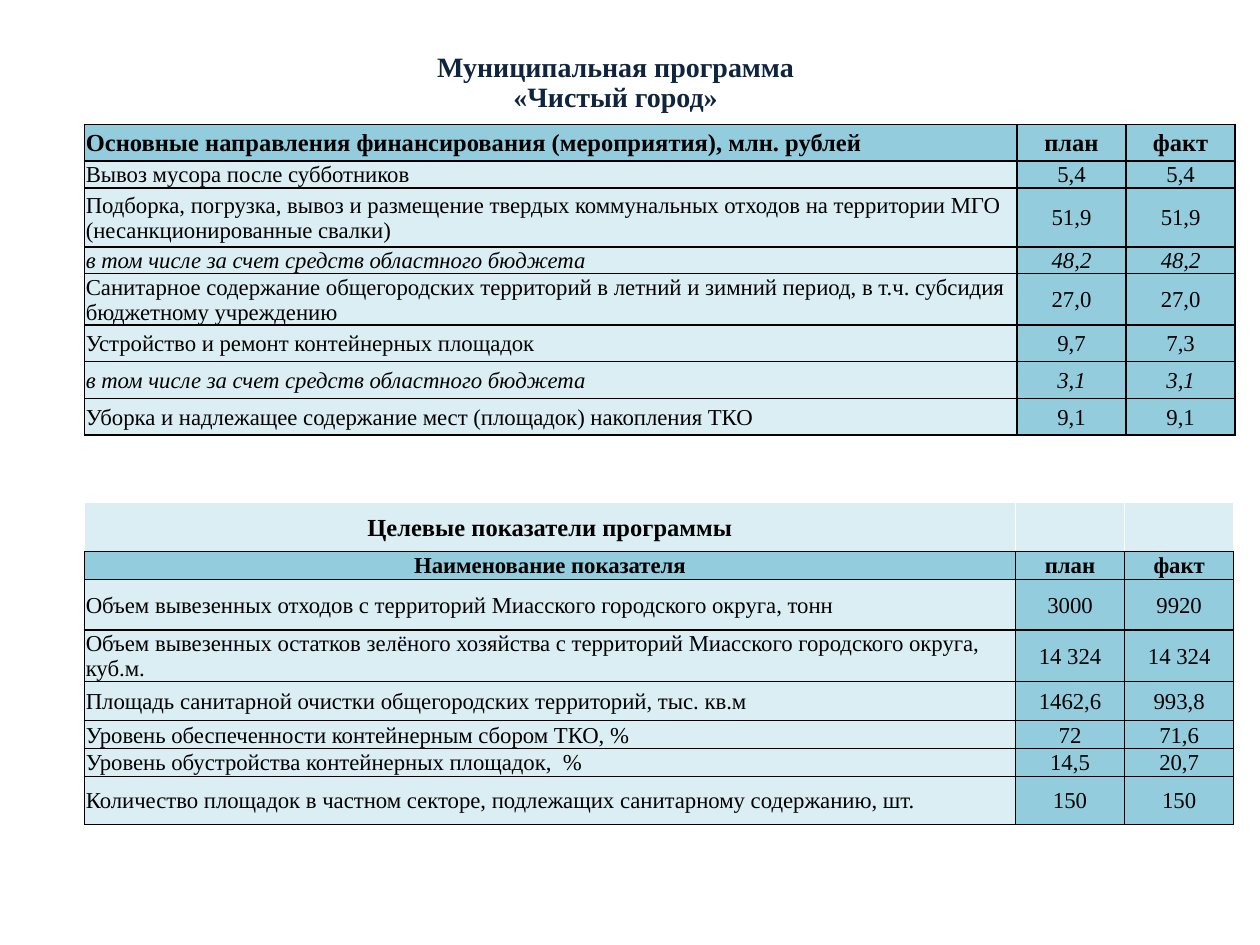
from lxml import etree
from pptx import Presentation
from pptx import util as u
from pptx.dml.color import RGBColor
from pptx.enum import text
from pptx.oxml import ns

BLACK = RGBColor(0x00, 0x00, 0x00)
WHITE = RGBColor(0xFF, 0xFF, 0xFF)
NAVY = RGBColor(0x0F, 0x24, 0x3E)
TEAL = RGBColor(0x93, 0xCD, 0xDD)
PALE = RGBColor(0xDB, 0xEE, 0xF4)

LEFT = 1.7
NUM = 2.2

COSTS = [
    (0.74, "head", "Основные направления финансирования (мероприятия), млн. рублей", "план", "факт"),
    (0.53, "body", "Вывоз мусора после субботников", "5,4", "5,4"),
    (1.19, "body", "Подборка, погрузка, вывоз и размещение твердых коммунальных отходов "
     "на территории МГО (несанкционированные свалки)", "51,9", "51,9"),
    (0.41, "part", "в том числе за счет средств областного бюджета", "48,2", "48,2"),
    (0.74, "body", "Санитарное содержание общегородских территорий в летний и зимний период, "
     "в т.ч. субсидия бюджетному учреждению", "27,0", "27,0"),
    (0.74, "body", "Устройство и ремонт контейнерных площадок", "9,7", "7,3"),
    (0.74, "part", "в том числе за счет средств областного бюджета", "3,1", "3,1"),
    (0.74, "body", "Уборка и надлежащее содержание мест (площадок) накопления ТКО", "9,1", "9,1"),
]

GOALS = [
    (0.99, "name", "Целевые показатели программы", "", ""),
    (0.56, "sub", "Наименование показателя", "план", "факт"),
    (1.02, "body", "Объем вывезенных отходов с территорий Миасского городского округа, тонн",
     "3000", "9920"),
    (0.79, "body", "Объем вывезенных остатков зелёного хозяйства с территорий "
     "Миасского городского округа, куб.м.", "14 324", "14 324"),
    (0.79, "body", "Площадь санитарной очистки общегородских территорий, тыс. кв.м",
     "1462,6", "993,8"),
    (0.56, "body", "Уровень обеспеченности контейнерным сбором ТКО, %", "72", "71,6"),
    (0.56, "body", "Уровень обустройства контейнерных площадок,  %", "14,5", "20,7"),
    (0.97, "body", "Количество площадок в частном секторе, подлежащих санитарному содержанию, шт.",
     "150", "150"),
]


class Deck:
    """Holds the text style and the current slide."""

    face = "Times New Roman"

    def __init__(self, slide):
        self.slide = slide

    def run(self, para, words, size, color=BLACK, bold=False, italic=False):
        run = para.add_run()
        run.text = words
        font = run.font
        font.name, font.size = self.face, u.Pt(size)
        font.bold, font.italic = bold, italic
        font.color.rgb = color

    def title(self, lines, left, top, width, height):
        box = self.slide.shapes.title
        box.left, box.top = u.Cm(left), u.Cm(top)
        box.width, box.height = u.Cm(width), u.Cm(height)
        frame = box.text_frame
        frame.word_wrap = True
        frame.auto_size = text.MSO_AUTO_SIZE.NONE
        frame.vertical_anchor = text.MSO_ANCHOR.MIDDLE
        para = frame.paragraphs[0]
        para.alignment = text.PP_ALIGN.CENTER
        para.line_spacing = 0.9
        for i, line in enumerate(lines):
            if i:
                para.add_line_break()
            self.run(para, line, 16, NAVY, bold=True)

    def edges(self, cell, side, base):
        props = cell._tc.get_or_add_tcPr()
        for i, (tag, color) in enumerate(zip("LRTB", (side, side, side, base))):
            line = etree.Element(ns.qn("a:ln" + tag), w=str(u.Pt(1)))
            fill = etree.SubElement(line, ns.qn("a:solidFill"))
            etree.SubElement(fill, ns.qn("a:srgbClr"), val=str(color))
            props.insert(i, line)

    def cell(self, cell, words, kind, first):
        cell.margin_left = cell.margin_right = cell.margin_top = u.Cm(0.03)
        cell.margin_bottom = u.Cm(0)
        cell.vertical_anchor = text.MSO_ANCHOR.MIDDLE
        dark = kind in ("head", "sub") or not first and kind != "name"
        cell.fill.solid()
        cell.fill.fore_color.rgb = TEAL if dark else PALE
        self.edges(cell, WHITE if kind == "name" else BLACK, BLACK)
        para = cell.text_frame.paragraphs[0]
        plain = first and kind in ("head", "body", "part")
        para.alignment = text.PP_ALIGN.LEFT if plain else text.PP_ALIGN.CENTER
        if words:
            self.run(para, words, 14 if kind in ("head", "name") else 13,
                     bold=kind in ("head", "sub", "name"), italic=kind == "part")

    def table(self, rows, top, wide):
        cols = (wide, NUM, NUM)
        high = sum(row[0] for row in rows)
        grid = self.slide.shapes.add_table(
            len(rows), len(cols), u.Cm(LEFT), u.Cm(top), u.Cm(sum(cols)), u.Cm(high)).table
        grid.first_row = grid.horz_banding = False
        for col, width in zip(grid.columns, cols):
            col.width = u.Cm(width)
        for r, (height, kind, *words) in enumerate(rows):
            grid.rows[r].height = u.Cm(height)
            for c, word in enumerate(words):
                self.cell(grid.cell(r, c), word, kind, c == 0)


def main():
    prs = Presentation()
    prs.slide_width, prs.slide_height = u.Cm(25.4), u.Cm(19.05)
    deck = Deck(prs.slides.add_slide(prs.slide_layouts[5]))
    deck.title(("Муниципальная программа", "«Чистый город»"), 0.71, 0.84, 23.4, 1.68)
    deck.table(COSTS, 2.51, 18.8)
    deck.table(GOALS, 10.13, 18.77)
    prs.save("out.pptx")


if __name__ == "__main__":
    main()
